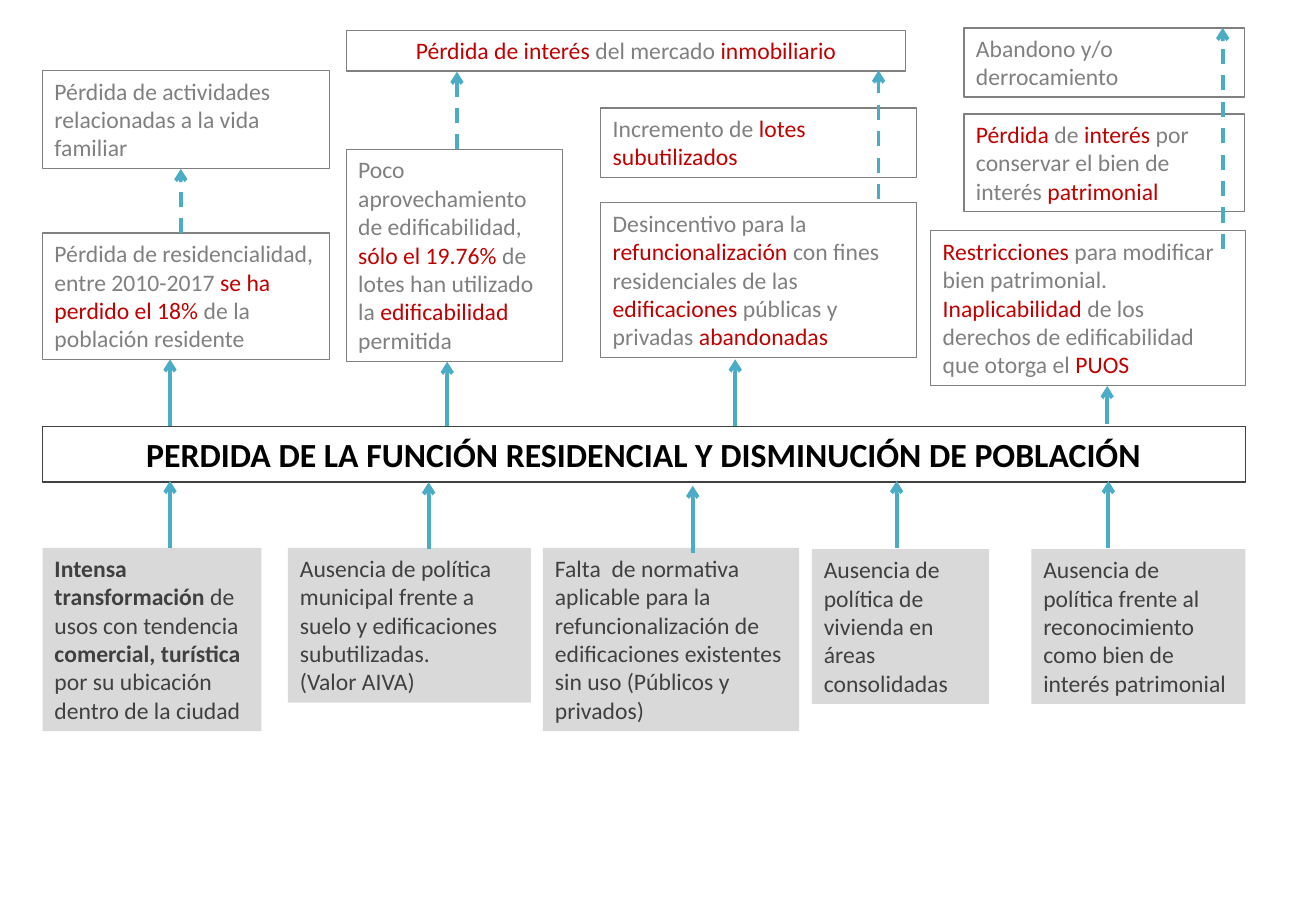
from dataclasses import dataclass

from lxml import etree
from pptx import Presentation
from pptx.dml.color import RGBColor
from pptx.enum.dml import MSO_LINE
from pptx.enum.shapes import MSO_CONNECTOR, MSO_SHAPE
from pptx.enum.text import MSO_ANCHOR, MSO_AUTO_SIZE, PP_ALIGN
from pptx.oxml.ns import qn
from pptx.util import Inches, Pt

RECT, STRAIGHT, DASH = MSO_SHAPE.RECTANGLE, MSO_CONNECTOR.STRAIGHT, MSO_LINE.DASH
TOP, LEFT, CENTER = MSO_ANCHOR.TOP, PP_ALIGN.LEFT, PP_ALIGN.CENTER
GROW = MSO_AUTO_SIZE.SHAPE_TO_FIT_TEXT
WIDE, HIGH = Inches(10.83), Inches(7.5)


def rgb(code):
    return RGBColor.from_string(code)


@dataclass(frozen=True)
class Theme:
    font: str = "Calibri"
    body: int = 14
    head: int = 20
    thin: float = 0.75
    thick: float = 2.25
    black: RGBColor = rgb("000000")
    dark: RGBColor = rgb("404040")
    grey: RGBColor = rgb("808080")
    pale: RGBColor = rgb("D9D9D9")
    red: RGBColor = rgb("C00000")
    teal: RGBColor = rgb("4BACC6")
    # Card height: one row per text line plus padding, in inches
    row: float = 0.235
    pad: float = 0.1


THEME = Theme()

# Each style has a plain format and one for words between asterisks
STYLES = {
    "effect": dict(line=THEME.grey, fill=None, size=THEME.body,
                   plain=dict(color=THEME.grey, bold=False),
                   strong=dict(color=THEME.red, bold=False)),
    "cause": dict(line=None, fill=THEME.pale, size=THEME.body,
                  plain=dict(color=THEME.dark, bold=False),
                  strong=dict(color=THEME.dark, bold=True)),
    "core": dict(line=THEME.dark, fill=None, size=THEME.head,
                 plain=dict(color=THEME.black, bold=True)),
}


@dataclass
class Box:
    """A region of the slide, divided into 100 columns and 100 rows."""
    left: float
    top: float
    width: float
    height: float

    def x(self, col):
        return Inches(self.left + self.width * col / 100)

    def y(self, row):
        return Inches(self.top + self.height * row / 100)

    def span(self, cols):
        return Inches(self.width * cols / 100)


def write(para, text, style):
    for i, part in enumerate(text.split("*")):
        if not part:
            continue
        look = style["strong" if i % 2 else "plain"]
        run = para.add_run()
        run.text = part
        values = dict(name=THEME.font, size=Pt(style["size"]), bold=look["bold"])
        for key, value in values.items():
            setattr(run.font, key, value)
        run.font.color.rgb = look["color"]


def panel(slide, place, text, kind, align=LEFT, pads=(0.1, 0.05)):
    style = STYLES[kind]
    shape = slide.shapes.add_shape(RECT, *place)
    shape.shadow.inherit = False
    if style["fill"] is None:
        shape.fill.background()
    else:
        shape.fill.solid()
        shape.fill.fore_color.rgb = style["fill"]
    if style["line"] is None:
        shape.line.fill.background()
    else:
        shape.line.color.rgb = style["line"]
        shape.line.width = Pt(THEME.thin)
    side, edge = map(Inches, pads)
    frame = shape.text_frame
    values = dict(word_wrap=True, auto_size=GROW, vertical_anchor=TOP,
                  margin_left=side, margin_right=side,
                  margin_top=edge, margin_bottom=edge)
    for key, value in values.items():
        setattr(frame, key, value)
    for i, line in enumerate(text.split("\n")):
        para = frame.add_paragraph() if i else frame.paragraphs[0]
        para.alignment = align
        write(para, line, style)


def card(slide, box, kind, col, row, cols, lines, text, align=LEFT):
    high = Inches(THEME.pad + THEME.row * lines)
    panel(slide, (box.x(col), box.y(row), box.span(cols), high), text, kind, align)


def arrow(slide, box, col, start, end, dash=None):
    x = box.x(col)
    link = slide.shapes.add_connector(STRAIGHT, x, box.y(start), x, box.y(end))
    link.line.color.rgb = THEME.teal
    link.line.width = Pt(THEME.thick)
    if dash:
        link.line.dash_style = dash
    props = link.line._get_or_add_ln()
    etree.SubElement(props, qn("a:tailEnd"), type="arrow")
    etree.SubElement(link._element.spPr, qn("a:effectLst"))


def effects(slide, box):
    # Column, row, columns wide, text lines, text
    cards = [
        (0, 10.7, 23.84, 3, "Pérdida de actividades relacionadas a la vida familiar"),
        (0, 51.5, 23.84, 4, "Pérdida de residencialidad, entre 2010-2017 "
         "*se ha perdido el 18%* de la población residente"),
        (25.25, 30.5, 18, 7, "Poco aprovechamiento de edificabilidad, *sólo el 19.76% *"
         "de lotes han utilizado la *edificabilidad *permitida"),
        (46.4, 20.1, 26.25, 2, "Incremento de *lotes subutilizados*"),
        (46.4, 43.9, 26.25, 5, "Desincentivo para la *refuncionalización *con fines "
         "residenciales de las *edificaciones* públicas y privadas *abandonadas*"),
        (76.6, 0, 23.35, 2, "Abandono y/o derrocamiento"),
        (76.6, 21.6, 23.35, 3, "*Pérdida* de *interés *por conservar el bien de "
         "interés *patrimonial*"),
        (73.84, 50.9, 26.16, 5, "*Restricciones* para modificar bien patrimonial. "
         "*Inaplicabilidad* de los derechos de edificabilidad que otorga el *PUOS*"),
    ]
    for item in cards:
        card(slide, box, "effect", *item)
    card(slide, box, "effect", 25.25, 0.6, 46.5, 1,
         "*Pérdida de interés *del mercado *inmobiliario*", CENTER)
    # Arrows: column, start row, end row
    for item in [(10.6, 100, 83.2), (33.64, 100, 83.8),
                 (57.58, 100, 83.2), (88.5, 99.4, 89.9)]:
        arrow(slide, box, *item)
    for item in [(11.5, 51.5, 35.4), (34.45, 30.5, 11),
                 (69.5, 43, 10.7), (98.1, 55.5, 0)]:
        arrow(slide, box, *item, DASH)


def core(slide, box):
    place = (box.x(0), box.y(0), box.span(100), Inches(box.height))
    panel(slide, place, "PERDIDA DE LA FUNCIÓN RESIDENCIAL Y DISMINUCIÓN DE POBLACIÓN",
          "core", CENTER, (0.12, 0.06))


def causes(slide, box):
    cards = [
        (0, 26.7, 18.2, 6, "*Intensa transformación *de usos con tendencia "
         "*comercial, turística *por su ubicación dentro de la ciudad"),
        (20.4, 26.7, 20.2, 5, "Ausencia de política municipal frente a suelo y "
         "edificaciones subutilizadas.\n(Valor AIVA)"),
        (41.6, 26.7, 21.3, 6, "Falta  de normativa aplicable para la refuncionalización "
         "de edificaciones existentes sin uso (Públicos y privados)"),
        (63.95, 27.2, 14.75, 5, "Ausencia de política de vivienda en áreas consolidadas"),
        (82.2, 27.2, 17.8, 5, "Ausencia de política frente al reconocimiento como bien "
         "de interés patrimonial"),
    ]
    for item in cards:
        card(slide, box, "cause", *item)
    # Arrows share one length: column, end row
    for col, end in [(10.6, 0), (32.1, 0.5), (54.05, 1.9), (71, 0), (88.6, 0)]:
        arrow(slide, box, col, end + 26.7, end)


def main():
    deck = Presentation()
    deck.slide_width, deck.slide_height = WIDE, HIGH
    slide = deck.slides.add_slide(deck.slide_layouts[6])
    effects(slide, Box(0.35, 0.23, 9.9, 3.28))
    core(slide, Box(0.35, 3.51, 9.9, 0.46))
    causes(slide, Box(0.35, 3.96, 9.9, 2.06))
    deck.save("out.pptx")


if __name__ == "__main__":
    main()
